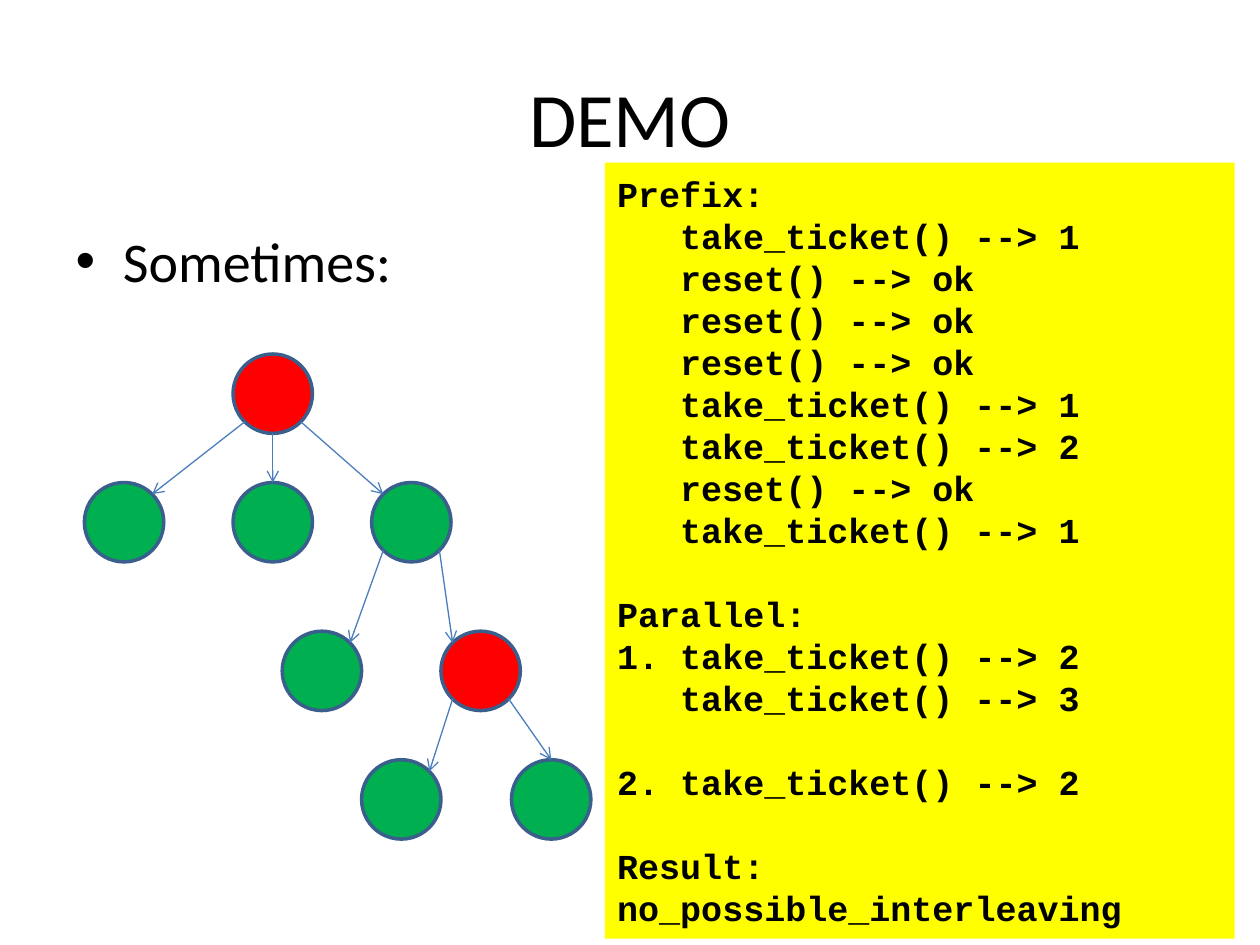
from math import cos, radians, sin

from lxml import etree
from pptx import Presentation
from pptx.dml.color import RGBColor
from pptx.enum.shapes import MSO_CONNECTOR, MSO_SHAPE
from pptx.enum.text import MSO_ANCHOR, PP_ALIGN
from pptx.oxml.ns import qn
from pptx.util import Inches, Pt

OVAL, RECT = MSO_SHAPE.OVAL, MSO_SHAPE.RECTANGLE
STRAIGHT = MSO_CONNECTOR.STRAIGHT
LEFT, CENTER = PP_ALIGN.LEFT, PP_ALIGN.CENTER
MIDDLE = MSO_ANCHOR.MIDDLE

BLACK, YELLOW, RED, GREEN = "000000", "FFFF00", "FF0000", "00B050"
OUTLINE, ARROW = "3A5F8C", "4B7EBC"

DIAMETER = 0.63
ROW_TOPS = [2.81, 3.83, 5.01, 6.03]
# name: (left, row, fill)
NODES = {
    "root": (1.85, 0, RED),
    "left": (0.67, 1, GREEN),
    "middle": (1.85, 1, GREEN),
    "right": (2.95, 1, GREEN),
    "right_a": (2.24, 2, GREEN),
    "right_b": (3.5, 2, RED),
    "leaf_a": (2.87, 3, GREEN),
    "leaf_b": (4.06, 3, GREEN),
}
# Angles on the circle, clockwise from the right-hand side
SE, S, SW, NW, N, NE = 45, 90, 135, 225, 270, 315
EDGES = [
    ("root", SW, "left", NE),
    ("root", S, "middle", N),
    ("root", SE, "right", NW),
    ("right", SW, "right_a", NE),
    ("right", SE, "right_b", NW),
    ("right_b", SW, "leaf_a", NE),
    ("right_b", SE, "leaf_b", N),
]

LINE = 24
# (text, indent in inches, blank lines before)
TRACE = [
    ("Prefix:", 0, 0),
    ("take_ticket() --> 1", 0.5, 0),
    ("reset() --> ok", 0.5, 0),
    ("reset() --> ok", 0.5, 0),
    ("reset() --> ok", 0.5, 0),
    ("take_ticket() --> 1", 0.5, 0),
    ("take_ticket() --> 2", 0.5, 0),
    ("reset() --> ok", 0.5, 0),
    ("take_ticket() --> 1", 0.5, 0),
    ("Parallel:", 0, 1),
    ("1. take_ticket() --> 2", 0, 0),
    ("take_ticket() --> 3", 0.5, 0),
    ("2. take_ticket() --> 2", 0, 1),
    ("Result: no_possible_interleaving", 0, 1),
]


def color(value):
    return RGBColor.from_string(value)


def add_run(p, text, size, font, bold=False):
    r = p.add_run()
    r.text = text
    r.font.size = Pt(size)
    r.font.name = font
    r.font.bold = bold
    r.font.color.rgb = color(BLACK)


def fill_placeholder(sp, box, text, size, align):
    sp.left, sp.top, sp.width, sp.height = map(Inches, box)
    p = sp.text_frame.paragraphs[0]
    p.alignment = align
    add_run(p, text, size, "Calibri")


def add_filled(s, kind, box, fill):
    sp = s.shapes.add_shape(kind, *map(Inches, box))
    sp.shadow.inherit = False
    sp.fill.solid()
    sp.fill.fore_color.rgb = color(fill)
    return sp


def add_trace(s):
    sp = add_filled(s, RECT, (4.8, 1.29, 5, 6.16), YELLOW)
    sp.line.fill.background()
    tf = sp.text_frame
    tf.word_wrap = True
    tf.vertical_anchor = MIDDLE
    for i, (text, indent, gap) in enumerate(TRACE):
        p = tf.add_paragraph() if i else tf.paragraphs[0]
        p.alignment = LEFT
        p.line_spacing = Pt(LINE)
        p.space_before = Pt(gap * LINE)
        p._p.get_or_add_pPr().set("marL", str(Inches(indent)))
        add_run(p, text, 20, "Courier New", bold=True)


def add_node(s, left, row, fill):
    sp = add_filled(s, OVAL, (left, ROW_TOPS[row], DIAMETER, DIAMETER), fill)
    sp.line.color.rgb = color(OUTLINE)
    sp.line.width = Pt(2)


def rim_point(name, angle):
    left, row, _ = NODES[name]
    radius, a = DIAMETER / 2, radians(angle)
    return (Inches(left + radius * (1 + cos(a))),
            Inches(ROW_TOPS[row] + radius * (1 + sin(a))))


def add_arrow(s, start, end):
    line = s.shapes.add_connector(STRAIGHT, *start, *end)
    line.line.color.rgb = color(ARROW)
    line.line.width = Pt(0.75)
    etree.SubElement(line.line._get_or_add_ln(), qn("a:tailEnd"), type="arrow")
    etree.SubElement(line._element.spPr, qn("a:effectLst"))


def main():
    prs = Presentation()
    prs.slide_width, prs.slide_height = Inches(10), Inches(7.5)
    s = prs.slides.add_slide(prs.slide_layouts[1])
    title, body = s.placeholders
    fill_placeholder(title, (0.5, 0.3, 9, 1.25), "DEMO", 44, CENTER)
    fill_placeholder(body, (0.5, 1.75, 9, 4.95), "Sometimes:", 32, LEFT)
    add_trace(s)
    for node in NODES.values():
        add_node(s, *node)
    for parent, exit_angle, child, entry_angle in EDGES:
        add_arrow(s, rim_point(parent, exit_angle),
                  rim_point(child, entry_angle))
    prs.save("out.pptx")


if __name__ == "__main__":
    main()
